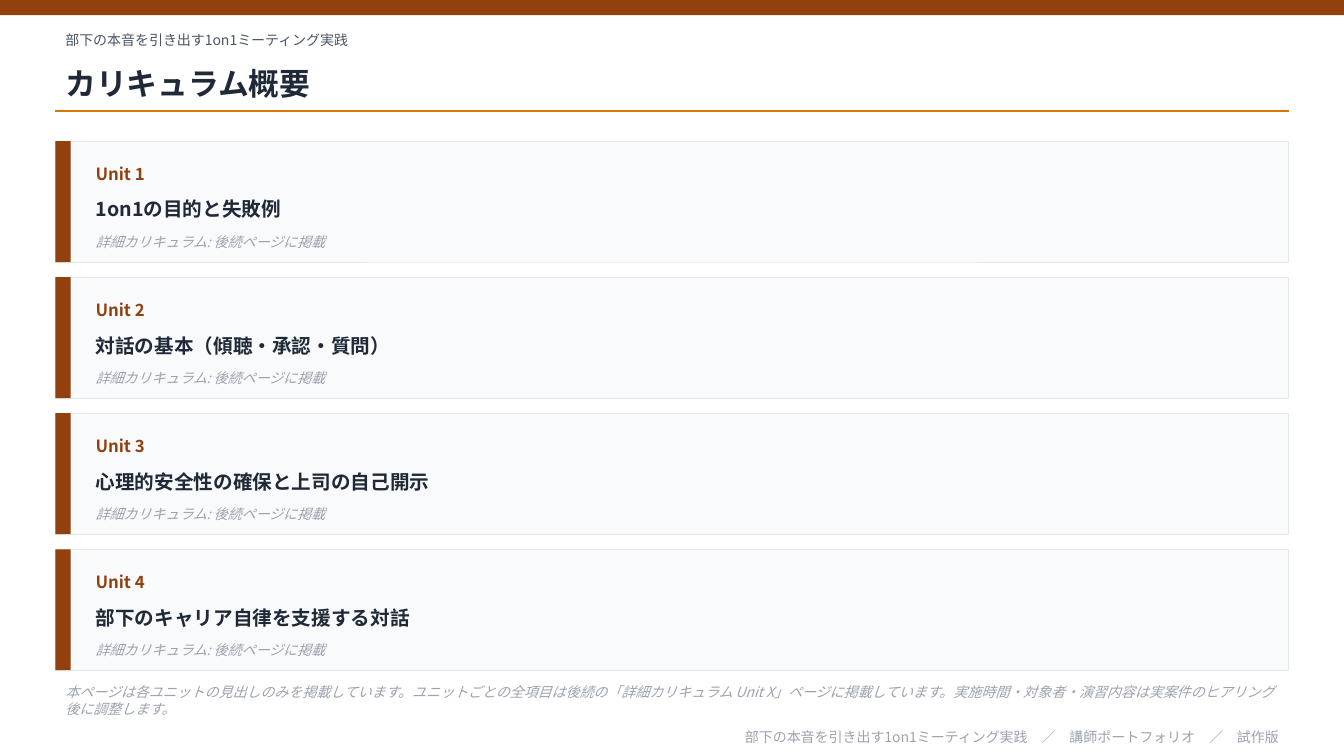
"""Build the curriculum overview slide of the 1on1 meeting course."""
from lxml.etree import SubElement
from pptx import Presentation
from pptx.dml.color import RGBColor
from pptx.enum.shapes import MSO_CONNECTOR, MSO_SHAPE
from pptx.enum.text import MSO_ANCHOR, PP_ALIGN
from pptx.oxml.ns import qn
from pptx.util import Inches, Pt

BROWN = RGBColor(0x92, 0x40, 0x0E)
ORANGE = RGBColor(0xD9, 0x77, 0x06)
INK = RGBColor(0x1F, 0x29, 0x37)
SLATE = RGBColor(0x4B, 0x55, 0x63)
GRAY = RGBColor(0x9C, 0xA3, 0xAF)
CARD_FILL = RGBColor(0xF9, 0xFA, 0xFB)
CARD_LINE = RGBColor(0xE5, 0xE7, 0xEB)

FONT = "Noto Sans CJK JP"
COURSE = "部下の本音を引き出す1on1ミーティング実践"
UNITS = [
    "1on1の目的と失敗例",
    "対話の基本（傾聴・承認・質問）",
    "心理的安全性の確保と上司の自己開示",
    "部下のキャリア自律を支援する対話",
]
SLIDE_WIDTH = 13.33
LEFT, WIDTH = 0.55, 12.23
CARD_TOP, CARD_HEIGHT, CARD_STEP = 1.4, 1.2, 1.35
TEXT_LEFT, TEXT_WIDTH = 0.85, 11.73

EYEBROW = {"size": Pt(10), "color": SLATE}
TITLE = {"size": Pt(22), "bold": True, "color": INK}
UNIT_LABEL = {"size": Pt(12), "bold": True, "color": BROWN}
UNIT_TITLE = {"size": Pt(14), "bold": True, "color": INK}
NOTE = {"size": Pt(10), "italic": True, "color": GRAY}
FOOTER = {"size": Pt(10), "color": GRAY}

presentation = Presentation()
presentation.slide_width = Inches(SLIDE_WIDTH)
presentation.slide_height = Inches(7.5)
slide = presentation.slides.add_slide(presentation.slide_layouts[6])


def add_box(left, top, width, height, fill, line=None):
    shape = slide.shapes.add_shape(
        MSO_SHAPE.RECTANGLE, Inches(left), Inches(top), Inches(width), Inches(height)
    )
    shape.shadow.inherit = False
    shape.fill.solid()
    shape.fill.fore_color.rgb = fill
    if line is None:
        shape.line.fill.background()
    else:
        shape.line.color.rgb = line
        shape.line.width = Pt(0.5)


def add_text(left, top, width, height, text, style, alignment=PP_ALIGN.LEFT):
    text_box = slide.shapes.add_textbox(
        Inches(left), Inches(top), Inches(width), Inches(height)
    )
    text_frame = text_box.text_frame
    text_frame.word_wrap = True
    text_frame.vertical_anchor = MSO_ANCHOR.MIDDLE
    paragraph = text_frame.paragraphs[0]
    paragraph.alignment = alignment
    run = paragraph.add_run()
    run.text = text
    for name, value in style.items():
        if name == "color":
            run.font.color.rgb = value
        else:
            setattr(run.font, name, value)
    run.font.name = FONT
    SubElement(run.font._element, qn("a:ea"), typeface=FONT)


add_box(0, 0, SLIDE_WIDTH, 0.15, BROWN)
add_text(LEFT, 0.25, WIDTH, 0.3, COURSE, EYEBROW)
add_text(LEFT, 0.55, WIDTH, 0.55, "カリキュラム概要", TITLE)

title_rule = slide.shapes.add_connector(
    MSO_CONNECTOR.STRAIGHT, Inches(LEFT), Inches(1.1), Inches(LEFT + WIDTH), Inches(1.1)
)
title_rule.line.color.rgb = ORANGE
title_rule.line.width = Pt(1)
SubElement(title_rule._element.spPr, qn("a:effectLst"))

for index, unit_title in enumerate(UNITS):
    top = CARD_TOP + index * CARD_STEP
    add_box(LEFT, top, WIDTH, CARD_HEIGHT, CARD_FILL, CARD_LINE)
    add_box(LEFT, top, 0.15, CARD_HEIGHT, BROWN)
    add_text(TEXT_LEFT, top + 0.12, 1.5, 0.4, f"Unit {index + 1}", UNIT_LABEL)
    add_text(TEXT_LEFT, top + 0.45, TEXT_WIDTH, 0.45, unit_title, UNIT_TITLE)
    add_text(TEXT_LEFT, top + 0.85, TEXT_WIDTH, 0.3, "詳細カリキュラム: 後続ページに掲載", NOTE)

add_text(
    LEFT, 6.75, WIDTH, 0.4,
    "本ページは各ユニットの見出しのみを掲載しています。"
    "ユニットごとの全項目は後続の「詳細カリキュラム Unit X」ページに掲載しています。"
    "実施時間・対象者・演習内容は実案件のヒアリング後に調整します。",
    NOTE,
)
add_text(
    LEFT, 7.2, WIDTH, 0.22,
    f"{COURSE}　／　講師ポートフォリオ　／　試作版", FOOTER, PP_ALIGN.RIGHT,
)

presentation.save("out.pptx")
